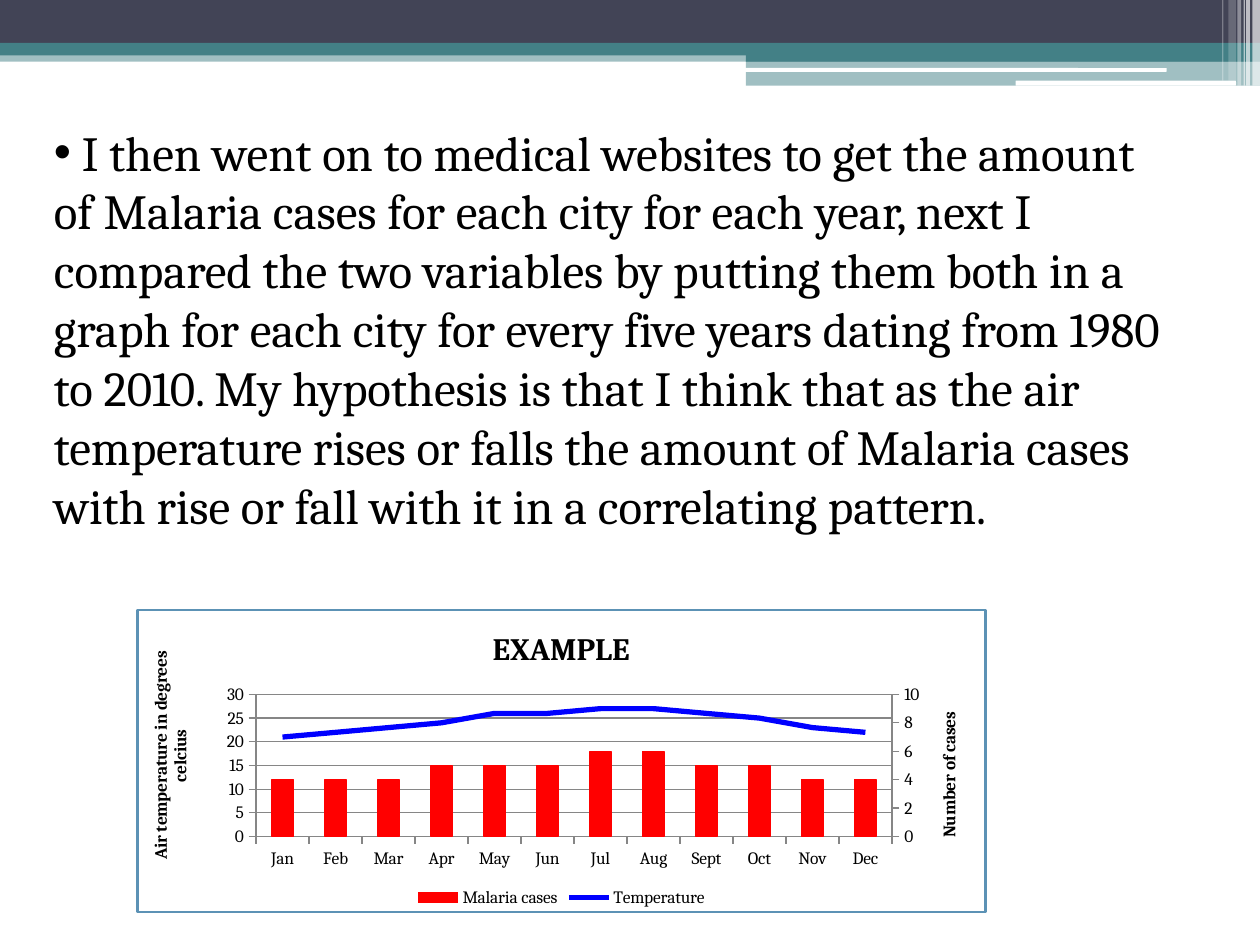
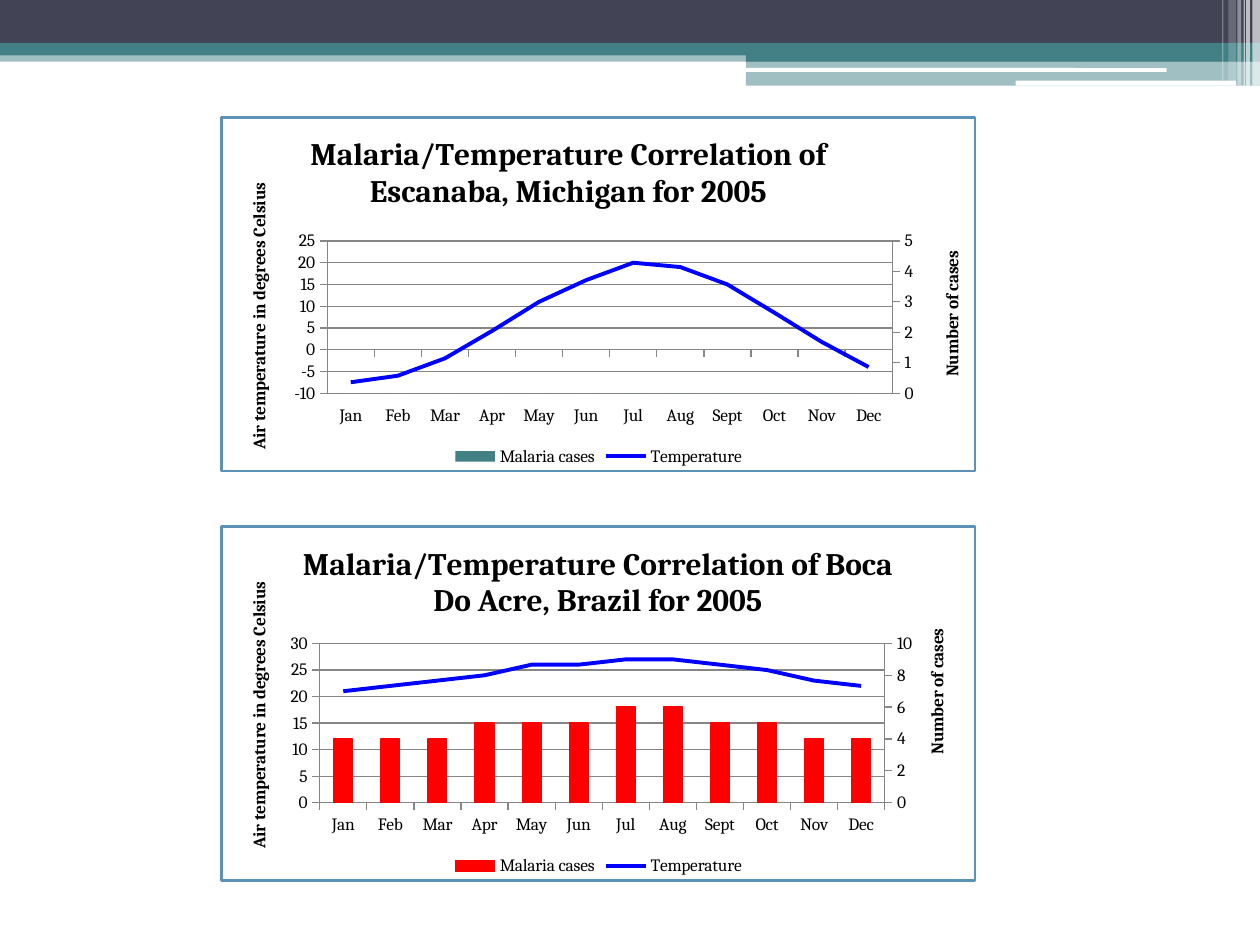
from copy import deepcopy
from dataclasses import dataclass

from lxml import etree
from pptx import Presentation
from pptx import util as u
from pptx.chart.axis import CategoryAxis, ValueAxis
from pptx.chart.data import CategoryChartData
from pptx.dml.color import RGBColor
from pptx.enum import chart as ch, shapes, text
from pptx.oxml import parse_xml
from pptx.oxml.ns import nsdecls, qn

FONT = "Cambria"
BLACK, WHITE, RED, BLUE = "000000", "FFFFFF", "FF0000", "0000FF"
NAVY, TEAL, GRAY, FRAME = "424456", "438086", "868686", "5C92B5"
RECT = shapes.MSO_SHAPE.RECTANGLE
ROUND = shapes.MSO_SHAPE.ROUNDED_RECTANGLE
MONTHS = "Jan Feb Mar Apr May Jun Jul Aug Sept Oct Nov Dec".split()
BRAZIL_CASES = (4, 4, 4, 5, 5, 5, 6, 6, 5, 5, 4, 4)
BRAZIL_TEMPERATURES = (21, 22, 23, 24, 26, 26, 27, 27, 26, 25, 23, 22)
METHOD = (
    "I then went on to medical websites to get the amount of Malaria cases for each "
    "city for each year, next I compared the two variables by putting them both in a "
    "graph for each city for every five years dating from 1980 to 2010. My hypothesis "
    "is that I think that as the air temperature rises or falls the amount of Malaria "
    "cases with rise or fall with it in a correlating pattern."
)


@dataclass(frozen=True)
class Band:
    left: float
    top: float
    width: float
    height: float
    color: str
    opacity: int = 100
    kind: int = RECT


@dataclass(frozen=True)
class Climate:
    """A chart of malaria cases and temperature; the spots are fractions of its frame."""
    box: tuple[float, float, float, float]
    title: str
    temperature_title: str
    cases: tuple
    temperatures: tuple
    cases_max: int
    plot: tuple[float, float, float, float]
    temperature_spot: tuple[float, float]
    cases_spot: tuple[float, float]
    title_spot: tuple[float, float] | None = None
    cases_color: str = RED
    line_width: float = 2.25


BANDS = [
    Band(0, 0.4, 10, 0.09, TEAL, 50),
    Band(0, 0, 10, 0.34, NAVY),
    Band(0, 0.34, 10, 0.1, TEAL),
    Band(5.92, 0.39, 4.08, 0.1, TEAL),
    Band(5.92, 0.48, 4.08, 0.2, TEAL, 50),
    Band(5.91, 0.54, 3.35, 0.03, WHITE, kind=ROUND),
    Band(8.06, 0.64, 1.75, 0.04, WHITE, kind=ROUND),
    Band(9.94, 0, 0.06, 0.68, WHITE, 65),
    Band(9.89, 0, 0.03, 0.68, WHITE, 65),
    Band(9.87, 0, 0.01, 0.68, WHITE, 60),
    Band(9.82, 0, 0.03, 0.68, WHITE, 40),
    Band(9.75, 0, 0.06, 0.64, WHITE, 20),
    Band(9.7, 0, 0.01, 0.64, WHITE, 30),
]

EXAMPLE = Climate(
    (1.08, 4.83, 6.75, 2.42), "EXAMPLE", "Air temperature in degrees celcius",
    BRAZIL_CASES, BRAZIL_TEMPERATURES, 10, (0.14, 0.28, 0.75, 0.47),
    (0.01, 0.13), (0.94, 0.33), line_width=3,
)
ESCANABA = Climate(
    (1.75, 0.92, 6, 2.83), "Malaria/Temperature Correlation of Escanaba, Michigan for 2005",
    "Air temperature in degrees Celsius", (0,) * 12,
    (-7.5, -6, -2, 4.3, 11, 16, 20, 19, 15, 8.5, 1.8, -4), 5, (0.14, 0.35, 0.75, 0.43),
    (0.03, 0.18), (0.95, 0.37), title_spot=(0.11, 0.03), cases_color=TEAL,
)
BOCA_DO_ACRE = Climate(
    (1.75, 4.17, 6, 2.83), "Malaria/Temperature Correlation of Boca Do Acre, Brazil for 2005",
    "Air temperature in degrees Celsius", BRAZIL_CASES, BRAZIL_TEMPERATURES, 10,
    (0.13, 0.33, 0.75, 0.45), (0.03, 0.15), (0.93, 0.28), title_spot=(0.1, 0.03),
)


def rgb(color: str) -> RGBColor:
    return RGBColor.from_string(color)


def inches(*lengths: float) -> list:
    return [u.Inches(length) for length in lengths]


def style_font(font, size: float, bold: bool = False) -> None:
    font.name, font.size, font.bold = FONT, u.Pt(size), bold
    font.color.rgb = rgb(BLACK)


def style_line(line, color: str, width: float) -> None:
    line.color.rgb = rgb(color)
    line.width = u.Pt(width)


def draw_band(page, band: Band) -> None:
    shape = page.shapes.add_shape(
        band.kind, *inches(band.left, band.top, band.width, band.height))
    shape.shadow.inherit = False
    shape.fill.solid()
    shape.fill.fore_color.rgb = rgb(band.color)
    shape.line.fill.background()
    if band.opacity < 100:
        color = shape.fill._xPr.find(".//" + qn("a:srgbClr"))
        etree.SubElement(color, qn("a:alpha"), val=str(band.opacity * 1000))


def add_page(deck):
    page = deck.slides.add_slide(deck.slide_layouts[6])
    for band in BANDS:
        draw_band(page, band)
    return page


def draw_bullet(page, words: str) -> None:
    box = page.shapes.add_textbox(*inches(0.33, 0.92, 9.08, 3.87))
    frame = box.text_frame
    frame.word_wrap = True
    frame.auto_size = text.MSO_AUTO_SIZE.NONE
    para = frame.paragraphs[0]
    para.text = " " + words
    style_font(para.runs[0].font, 28)
    properties = para._p.get_or_add_pPr()
    etree.SubElement(properties, qn("a:buFont"), typeface="Arial")
    etree.SubElement(properties, qn("a:buChar"), char="•")


def place(element, *fractions: float) -> None:
    """Fix the position, and for four fractions the inner size, of a chart part."""
    for old in element.findall(qn("c:layout")):
        element.remove(old)
    layout = parse_xml(f"<c:layout {nsdecls('c')}><c:manualLayout/></c:layout>")
    settings = [("xMode", "edge"), ("yMode", "edge"), *zip("xywh", fractions)]
    if len(fractions) == 4:
        settings.insert(0, ("layoutTarget", "inner"))
    for name, value in settings:
        etree.SubElement(layout[0], qn("c:" + name), val=str(value))
    has_text = element.find(qn("c:tx")) is not None
    element.insert(1 if has_text else 0, layout)


def write_title(title, words: str, size: float) -> None:
    title.text_frame.text = words
    style_font(title.text_frame.paragraphs[0].runs[0].font, size, bold=True)


def style_axis(axis) -> None:
    axis.major_tick_mark = ch.XL_TICK_MARK.OUTSIDE
    axis.minor_tick_mark = ch.XL_TICK_MARK.NONE
    style_font(axis.tick_labels.font, 10)
    style_line(axis.format.line, GRAY, 0.75)


def title_value_axis(axis, words: str, spot: tuple[float, float]) -> None:
    write_title(axis.axis_title, words, 10)
    element = axis.axis_title.element
    body = element.find(".//" + qn("a:bodyPr"))
    body.set("rot", "-5400000")
    body.set("vert", "horz")
    place(element, *spot)


def split_off_line(plot_area) -> None:
    """Turn the second column series into a line that keeps the present axes."""
    columns = plot_area.find(qn("c:barChart"))
    series = columns.findall(qn("c:ser"))[1]
    for inverted in series.findall(qn("c:invertIfNegative")):
        series.remove(inverted)
    lines = parse_xml(
        f'<c:lineChart {nsdecls("c")}><c:grouping val="standard"/>'
        '<c:varyColors val="0"/><c:marker val="1"/></c:lineChart>')
    lines.insert(2, series)
    for axis_id in columns.findall(qn("c:axId")):
        lines.append(deepcopy(axis_id))
    columns.addnext(lines)


def add_cases_axes(plot_area) -> ValueAxis:
    """Give the columns a value axis on the right and a hidden category axis."""
    ids = ("50010", "50020")
    for axis_id, value in zip(plot_area.find(qn("c:barChart")).findall(qn("c:axId")), ids):
        axis_id.set("val", value)
    months, values = (plot_area.find(qn(tag)) for tag in ("c:catAx", "c:valAx"))
    hidden, right = deepcopy(months), deepcopy(values)
    values.addnext(right)
    right.addnext(hidden)
    for node, own, other in ((hidden, *ids), (right, *reversed(ids))):
        node.find(qn("c:axId")).set("val", own)
        node.find(qn("c:crossAx")).set("val", other)
    right.find(qn("c:axPos")).set("val", "r")
    right.find(qn("c:crosses")).set("val", "max")
    CategoryAxis(hidden).visible = False
    axis = ValueAxis(right)
    axis.has_major_gridlines = False
    return axis


def frame_chart(chart) -> None:
    properties = parse_xml(
        f'<c:spPr {nsdecls("c", "a")}>'
        f'<a:solidFill><a:srgbClr val="{WHITE}"/></a:solidFill>'
        f'<a:ln w="{u.Pt(1.5)}"><a:solidFill><a:srgbClr val="{FRAME}"/></a:solidFill></a:ln>'
        "</c:spPr>")
    chart.element.find(qn("c:txPr")).addprevious(properties)


def draw_climate(page, climate: Climate) -> None:
    data = CategoryChartData()
    data.categories = MONTHS
    data.add_series("Malaria cases", climate.cases)
    data.add_series("Temperature", climate.temperatures)
    chart = page.shapes.add_chart(
        ch.XL_CHART_TYPE.COLUMN_CLUSTERED, *inches(*climate.box), data).chart
    style_font(chart.font, 10)
    frame_chart(chart)

    chart.has_title = True
    write_title(chart.chart_title, climate.title, 18)
    if climate.title_spot:
        place(chart.chart_title.element, *climate.title_spot)
    chart.has_legend = True
    chart.legend.position = ch.XL_LEGEND_POSITION.BOTTOM
    chart.legend.include_in_layout = False
    style_font(chart.legend.font, 10)

    months, temperature = chart.category_axis, chart.value_axis
    style_axis(months)
    months.tick_label_position = ch.XL_TICK_LABEL_POSITION.LOW
    style_axis(temperature)
    temperature.has_major_gridlines = True
    style_line(temperature.major_gridlines.format.line, GRAY, 0.75)

    plot_area = chart.element.find(".//" + qn("c:plotArea"))
    split_off_line(plot_area)
    cases = add_cases_axes(plot_area)
    cases.minimum_scale, cases.maximum_scale = 0, climate.cases_max
    title_value_axis(temperature, climate.temperature_title, climate.temperature_spot)
    title_value_axis(cases, "Number of cases", climate.cases_spot)
    place(plot_area, *climate.plot)

    columns, lines = chart.plots
    columns.vary_by_categories = False
    columns.gap_width = 150
    bars, curve = columns.series[0], lines.series[0]
    bars.format.fill.solid()
    bars.format.fill.fore_color.rgb = rgb(climate.cases_color)
    if any(climate.cases):
        style_line(bars.format.line, climate.cases_color, 0.75)
    style_line(curve.format.line, BLUE, climate.line_width)
    curve.marker.style = ch.XL_MARKER_STYLE.NONE
    curve.smooth = False


def main() -> None:
    deck = Presentation()
    deck.slide_width, deck.slide_height = inches(10, 7.5)
    method = add_page(deck)
    draw_bullet(method, METHOD)
    draw_climate(method, EXAMPLE)
    results = add_page(deck)
    for climate in (ESCANABA, BOCA_DO_ACRE):
        draw_climate(results, climate)
    deck.save("out.pptx")


if __name__ == "__main__":
    main()
